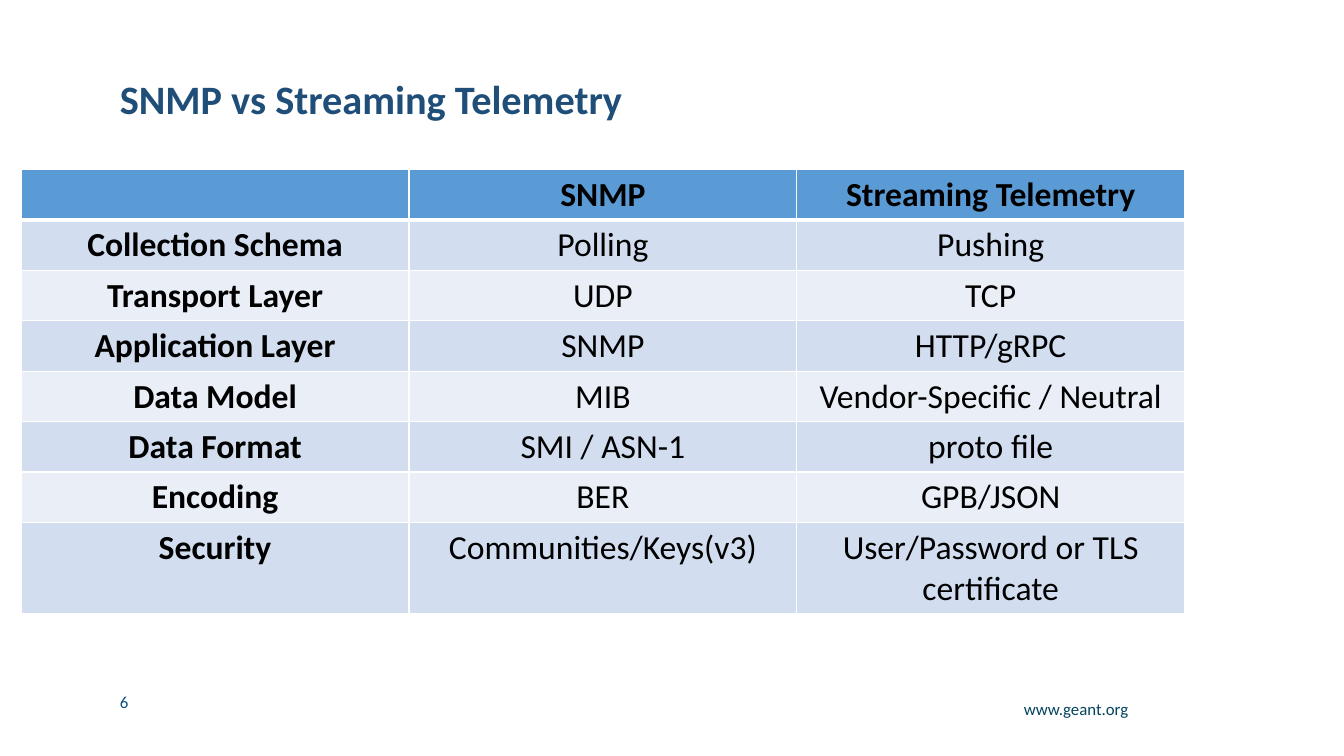
from lxml import etree
from pptx import Presentation
from pptx.dml.color import RGBColor
from pptx.enum.text import MSO_ANCHOR, PP_ALIGN
from pptx.oxml.ns import qn
from pptx.util import Inches, Pt

LEFT, CENTER, RIGHT = PP_ALIGN.LEFT, PP_ALIGN.CENTER, PP_ALIGN.RIGHT
TOP, MIDDLE = MSO_ANCHOR.TOP, MSO_ANCHOR.MIDDLE
FONT = "Calibri"
HEAD, BANDS = "5B9BD5", ("EAEFF7", "D2DEEF")
ROWS = [
    ("", "SNMP", "Streaming Telemetry"),
    ("Collection Schema", "Polling", "Pushing"),
    ("Transport Layer", "UDP", "TCP"),
    ("Application Layer", "SNMP", "HTTP/gRPC"),
    ("Data Model", "MIB", "Vendor-Specific / Neutral"),
    ("Data Format", "SMI / ASN-1", "proto file"),
    ("Encoding", "BER", "GPB/JSON"),
    ("Security", "Communities/Keys(v3)", "User/Password or TLS certificate"),
]


def color(code):
    return RGBColor.from_string(code)


def write(frame, text, size, code, bold=False, align=LEFT):
    frame.text = text
    para = frame.paragraphs[0]
    para.alignment = align
    for run in para.runs:
        run.font.name = FONT
        run.font.size = Pt(size)
        run.font.bold = bold
        run.font.color.rgb = color(code)
    return para


def add_text(slide, box, text, size, code, bold=False, align=LEFT, anchor=TOP):
    frame = slide.shapes.add_textbox(*map(Inches, box)).text_frame
    frame.word_wrap = True
    frame.vertical_anchor = anchor
    return write(frame, text, size, code, bold, align)


def set_edges(cell, heavy):
    """Draw white borders; a heavy cell has a thick bottom edge."""
    props = cell._tc.get_or_add_tcPr()
    for spot, side in enumerate(("L", "R", "T", "B")):
        width = 3 if heavy and side == "B" else 1
        line = etree.Element(qn(f"a:ln{side}"), w=str(Pt(width)))
        fill = etree.SubElement(line, qn("a:solidFill"))
        etree.SubElement(fill, qn("a:srgbClr"), val="FFFFFF")
        props.insert(spot, line)


def add_grid(slide):
    table = slide.shapes.add_table(
        len(ROWS), len(ROWS[0]), Inches(0.21), Inches(1.68),
        Inches(11.54), Inches(4.4)).table
    for r, row in enumerate(ROWS):
        table.rows[r].height = Inches(0.42)
        for c, text in enumerate(row):
            cell = table.cell(r, c)
            write(cell.text_frame, text, 24, "000000", r == 0 or c == 0, CENTER)
            cell.fill.solid()
            cell.fill.fore_color.rgb = color(BANDS[r % 2] if r else HEAD)
            set_edges(cell, r == 0)


def main():
    deck = Presentation()
    deck.slide_width, deck.slide_height = Inches(13.33), Inches(7.5)
    slide = deck.slides.add_slide(deck.slide_layouts[6])
    add_text(slide, (1.09, 6.81, 1.45, 0.3), "6", 12, "065081")
    site = add_text(slide, (9.61, 6.91, 1.68, 0.37), "www.geant.org", 12,
                    "03435F", align=RIGHT)
    title = add_text(slide, (1.09, 0.77, 10.82, 0.47),
                     "SNMP vs Streaming Telemetry", 28.8, "1F4E79",
                     bold=True, anchor=MIDDLE)
    for para in (site, title):
        para.line_spacing = 0.9
    add_grid(slide)
    deck.save("out.pptx")


if __name__ == "__main__":
    main()
